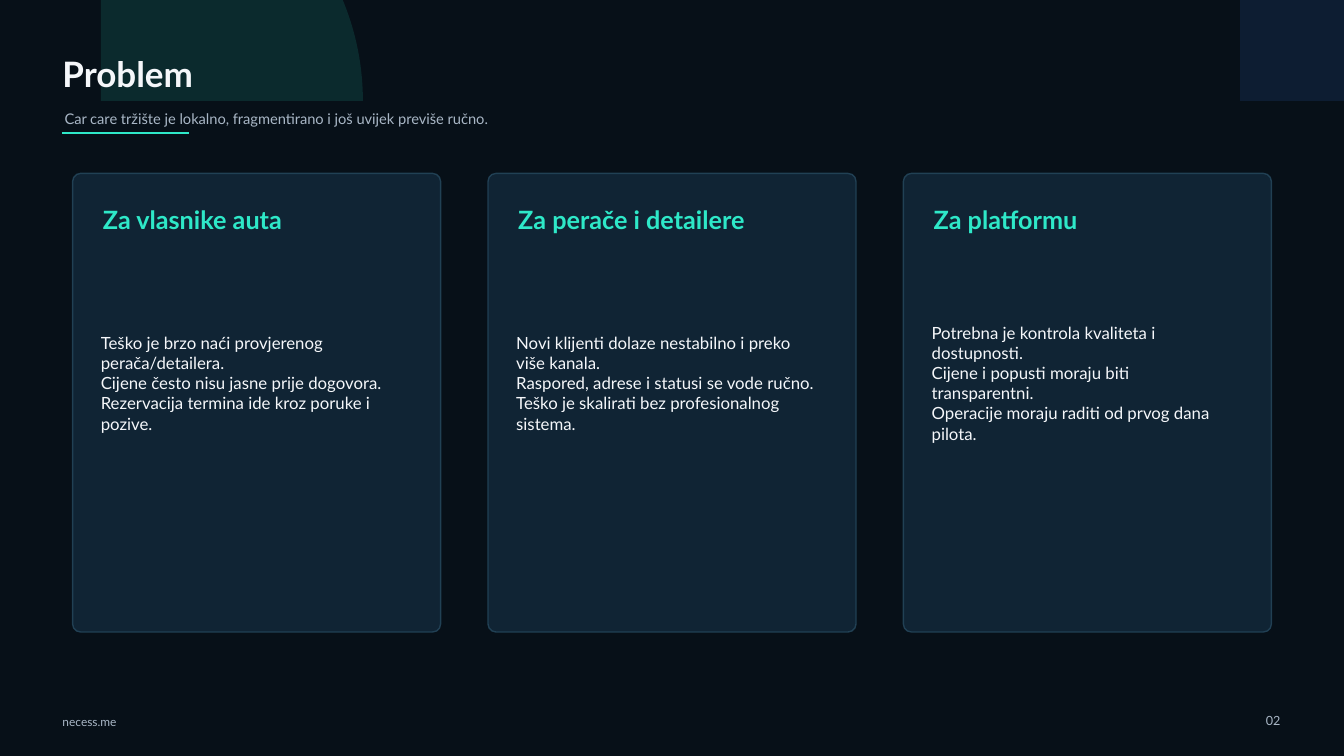
from dataclasses import dataclass

from lxml import etree
from pptx import Presentation
from pptx.dml.color import RGBColor
from pptx.enum.shapes import MSO_CONNECTOR, MSO_SHAPE
from pptx.enum.text import MSO_ANCHOR, PP_ALIGN
from pptx.oxml.ns import qn
from pptx.util import Pt

ARC, CARD, STRAIGHT = MSO_SHAPE.ARC, MSO_SHAPE.ROUNDED_RECTANGLE, MSO_CONNECTOR.STRAIGHT
MIDDLE, LEFT, RIGHT = MSO_ANCHOR.MIDDLE, PP_ALIGN.LEFT, PP_ALIGN.RIGHT
PX = 9144
SLIDE_WIDTH, SLIDE_HEIGHT = 1333, 750


@dataclass(frozen=True)
class Theme:
    """Colours, font and type sizes of the deck."""
    font: str = "Lato"
    background: str = "071018"
    card: str = "102434"
    border: str = "25475C"
    accent: str = "2EE8C8"
    blue: str = "3B82F6"
    text: str = "F5F7FA"
    muted: str = "A9B7C6"
    title_size: float = 25
    subtitle_size: float = 10.5
    heading_size: float = 18
    body_size: float = 12
    site_size: float = 8.5
    number_size: float = 9


THEME = Theme()
CARDS = [
    ("Za vlasnike auta", [
        "Teško je brzo naći provjerenog perača/detailera.",
        "Cijene često nisu jasne prije dogovora.",
        "Rezervacija termina ide kroz poruke i pozive.",
    ]),
    ("Za perače i detailere", [
        "Novi klijenti dolaze nestabilno i preko više kanala.",
        "Raspored, adrese i statusi se vode ručno.",
        "Teško je skalirati bez profesionalnog sistema.",
    ]),
    ("Za platformu", [
        "Potrebna je kontrola kvaliteta i dostupnosti.",
        "Cijene i popusti moraju biti transparentni.",
        "Operacije moraju raditi od prvog dana pilota.",
    ]),
]


def scale(*lengths):
    """Turn px lengths into EMU."""
    return [length * PX for length in lengths]


def set_opacity(fill, percent):
    """Make a solid fill partly transparent."""
    color = fill._xPr.find(qn("a:solidFill"))[0]
    etree.SubElement(color, qn("a:alpha")).set("val", str(percent * 1000))


def add_filled_shape(page, kind, box, color):
    """Add a flat shape with a solid fill and no shadow."""
    shape = page.shapes.add_shape(kind, *scale(*box))
    shape.shadow.inherit = False
    shape.fill.solid()
    shape.fill.fore_color.rgb = RGBColor.from_string(color)
    return shape


def add_text(page, box, lines, size, color, bold=False, align=LEFT):
    """Add a vertically centred text box with one paragraph per line."""
    frame = page.shapes.add_textbox(*scale(*box)).text_frame
    frame.word_wrap = True
    frame.vertical_anchor = MIDDLE
    frame.margin_left = frame.margin_top = frame.margin_right = frame.margin_bottom = 0
    frame.text = "\n".join(lines)
    for para in frame.paragraphs:
        para.alignment = align
        para.font.name = THEME.font
        para.font.size = Pt(size)
        para.font.bold = bold
        para.font.color.rgb = RGBColor.from_string(color)


def add_glow(page, box, color):
    """Add a faint quarter disc."""
    glow = add_filled_shape(page, ARC, box, color)
    glow.line.fill.background()
    set_opacity(glow.fill, 12)


def add_header(page, box):
    """Add the title, subtitle and accent rule."""
    left, top, width, _ = box
    add_text(page, (left, top, width, 55), ["Problem"], THEME.title_size, THEME.text, bold=True)
    subtitle = "Car care tržište je lokalno, fragmentirano i još uvijek previše ručno."
    add_text(page, (left + 2, top + 55, width + 20, 36), [subtitle],
             THEME.subtitle_size, THEME.muted)
    rule = page.shapes.add_connector(
        STRAIGHT, *scale(left, top + 87, left + 125, top + 87))
    rule.line.color.rgb = RGBColor.from_string(THEME.accent)
    rule.line.width = Pt(2)
    etree.SubElement(rule._element.spPr, qn("a:effectLst"))


def add_footer(page, box):
    """Add the site address and page number."""
    left, top, width, height = box
    add_text(page, (left, top + 3, 140, 22), ["necess.me"], THEME.site_size, THEME.muted)
    add_text(page, (left + width - 45, top, 45, height), ["02"],
             THEME.number_size, THEME.muted, align=RIGHT)


def add_card(page, box):
    """Add the outlined panel behind one group of problems."""
    panel = add_filled_shape(page, CARD, box, THEME.card)
    panel.adjustments[0] = 0.022
    panel.line.color.rgb = RGBColor.from_string(THEME.border)
    panel.line.width = Pt(1)
    set_opacity(panel.line.fill, 85)


def add_card_text(page, box, heading, problems):
    """Add the heading and problems of one card."""
    left, top, _, _ = box
    add_text(page, (left + 30, top + 28, 300, 35), [heading],
             THEME.heading_size, THEME.accent, bold=True)
    add_text(page, (left + 28, top + 83, 300, 250), problems, THEME.body_size, THEME.text)


def add_cards(page, box):
    """Spread the cards evenly over the box."""
    left, top, width, height = box
    card_width = 365
    step = (width - card_width) // (len(CARDS) - 1)
    card_boxes = [(left + index * step, top, card_width, height) for index in range(len(CARDS))]
    for card_box in card_boxes:
        add_card(page, card_box)
    for card_box, (heading, problems) in zip(card_boxes, CARDS):
        add_card_text(page, card_box, heading, problems)


def add_problem_page(deck):
    """Add the problem slide."""
    page = deck.slides.add_slide(deck.slide_layouts[6])
    page.background.fill.solid()
    page.background.fill.fore_color.rgb = RGBColor.from_string(THEME.background)
    add_glow(page, (-160, -160, 520, 520), THEME.accent)
    add_glow(page, (950, -180, 560, 560), THEME.blue)
    add_header(page, (62, 45, 840, 91))
    add_footer(page, (62, 702, 1208, 25))
    add_cards(page, (72, 172, 1189, 455))


def main():
    """Build and save the deck."""
    deck = Presentation()
    deck.slide_width, deck.slide_height = scale(SLIDE_WIDTH, SLIDE_HEIGHT)
    add_problem_page(deck)
    deck.save("out.pptx")


if __name__ == "__main__":
    main()
